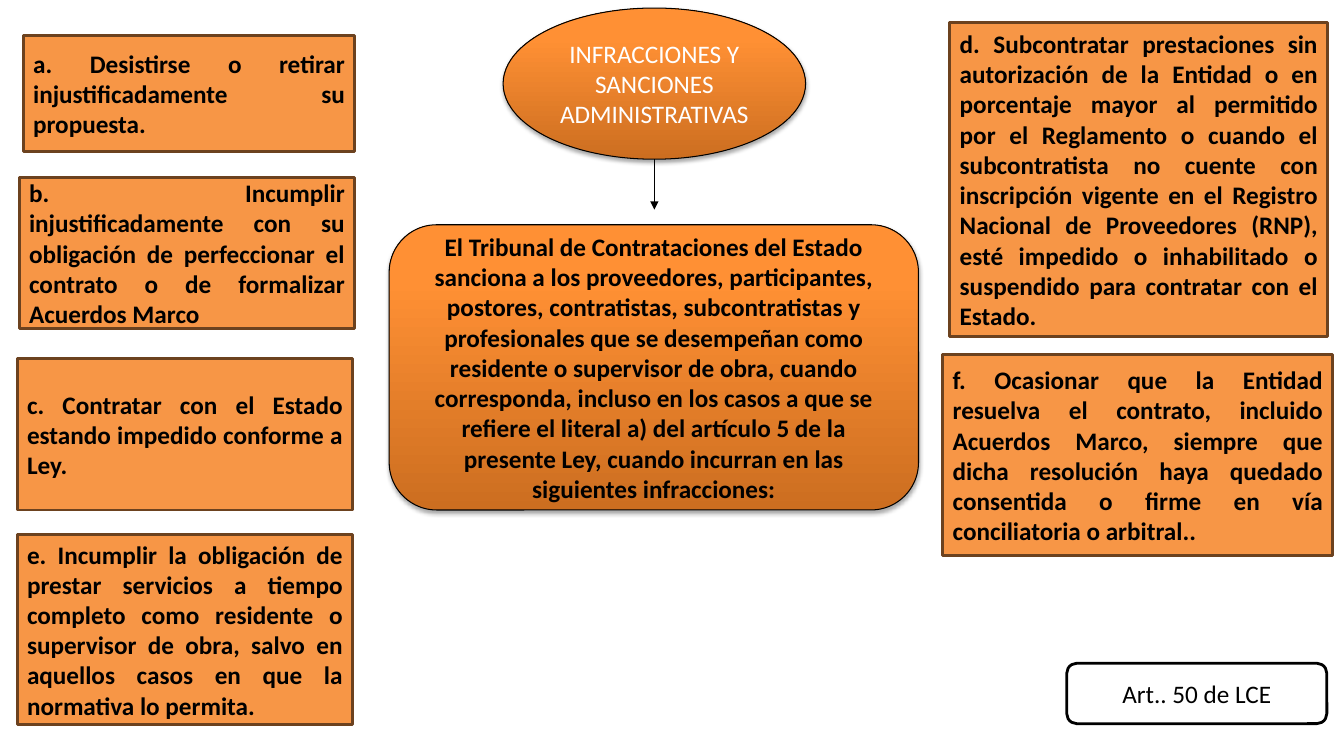
from lxml import etree
from pptx import Presentation
from pptx.dml.color import RGBColor
from pptx.enum.shapes import MSO_CONNECTOR, MSO_SHAPE
from pptx.enum.text import MSO_ANCHOR, PP_ALIGN
from pptx.oxml import parse_xml
from pptx.oxml.ns import nsdecls, qn
from pptx.util import Inches, Pt

BLACK, WHITE = "000000", "FFFFFF"
ORANGE, BROWN = "F79646", "6C421F"
GRADIENT = [(0, "CC6E20"), (80, "FF9034"), (100, "FF9136")]

TITLE = "INFRACCIONES Y SANCIONES ADMINISTRATIVAS"
RULING = (
    "El Tribunal de Contrataciones del Estado sanciona a los proveedores, participantes, "
    "postores, contratistas, subcontratistas y profesionales que se desempeñan como "
    "residente o supervisor de obra, cuando corresponda, incluso en los casos a que se "
    "refiere el literal a) del artículo 5 de la presente Ley, cuando incurran en las "
    "siguientes infracciones:"
)
INFRACTIONS = [
    ((0.23, 0.35, 3.29, 1.15), "a. Desistirse o retirar injustificadamente su propuesta."),
    ((0.19, 1.76, 3.33, 1.5),
     "b. Incumplir injustificadamente con su obligación de perfeccionar el contrato "
     "o de formalizar Acuerdos Marco"),
    ((0.17, 3.56, 3.33, 1.5), "c. Contratar con el Estado estando impedido conforme a Ley."),
    ((9.42, 0.22, 3.75, 3.12),
     "d. Subcontratar prestaciones sin autorización de la Entidad o en porcentaje mayor "
     "al permitido por el Reglamento o cuando el subcontratista no cuente con inscripción "
     "vigente en el Registro Nacional de Proveedores (RNP), esté impedido o inhabilitado "
     "o suspendido para contratar con el Estado."),
    ((0.17, 5.3, 3.33, 1.89),
     "e. Incumplir la obligación de prestar servicios a tiempo completo como residente o "
     "supervisor de obra, salvo en aquellos casos en que la normativa lo permita."),
    ((9.35, 3.52, 3.87, 1.99),
     "f. Ocasionar que la Entidad resuelva el contrato, incluido Acuerdos Marco, siempre "
     "que dicha resolución haya quedado consentida o firme en vía conciliatoria o arbitral.."),
]


def color(hex_code):
    return RGBColor.from_string(hex_code)


def write_text(shape, text, align=PP_ALIGN.CENTER, size=18, ink=BLACK, bold=False):
    frame = shape.text_frame
    frame.word_wrap = True
    frame.vertical_anchor = MSO_ANCHOR.MIDDLE
    paragraph = frame.paragraphs[0]
    paragraph.alignment = align
    run = paragraph.add_run()
    run.text = text
    run.font.name = "Calibri"
    run.font.size = Pt(size)
    run.font.bold = bold
    run.font.color.rgb = color(ink)


def add_box(slide, kind, place, fill, outline, weight):
    box = slide.shapes.add_shape(kind, *map(Inches, place))
    box.fill.solid()
    box.fill.fore_color.rgb = color(fill)
    box.line.color.rgb = color(outline)
    box.line.width = Pt(weight)
    box.shadow.inherit = False
    return box


def add_glossy_box(slide, kind, place):
    """Add a box with the orange gradient, dark at the bottom, and a soft shadow."""
    box = add_box(slide, kind, place, ORANGE, BLACK, 0.75)
    box.fill.gradient()
    box.fill.gradient_angle = 90
    properties = box.element.spPr
    stops = properties.find(qn("a:gradFill")).find(qn("a:gsLst"))
    for stop in list(stops):
        stops.remove(stop)
    for position, shade in GRADIENT:
        stop = etree.SubElement(stops, qn("a:gs"), pos=str(position * 1000))
        etree.SubElement(stop, qn("a:srgbClr"), val=shade)
    properties.find(qn("a:effectLst")).append(parse_xml(
        f'<a:outerShdw {nsdecls("a")} blurRad="{Pt(3.1)}" dist="{Pt(1.8)}" dir="5400000" '
        f'rotWithShape="0"><a:srgbClr val="{BLACK}"><a:alpha val="35000"/></a:srgbClr>'
        "</a:outerShdw>"))
    return box


def add_arrow(slide, start, end):
    arrow = slide.shapes.add_connector(
        MSO_CONNECTOR.STRAIGHT, *map(Inches, start + end))
    arrow.line.color.rgb = color(BLACK)
    arrow.line.width = Pt(0.75)
    properties = arrow.element.spPr
    etree.SubElement(properties.find(qn("a:ln")), qn("a:tailEnd"), type="triangle")
    etree.SubElement(properties, qn("a:effectLst"))


def main():
    deck = Presentation()
    deck.slide_width, deck.slide_height = Inches(13.33), Inches(7.5)
    slide = deck.slides.add_slide(deck.slide_layouts[6])

    title = add_glossy_box(slide, MSO_SHAPE.OVAL, (4.99, 0.08, 3, 1.5))
    write_text(title, TITLE, ink=WHITE)
    add_arrow(slide, (6.49, 1.58), (6.49, 2.08))
    ruling = add_glossy_box(slide, MSO_SHAPE.ROUNDED_RECTANGLE, (3.86, 2.23, 5.25, 2.83))
    write_text(ruling, RULING, bold=True)

    for place, text in INFRACTIONS:
        infraction = add_box(slide, MSO_SHAPE.RECTANGLE, place, ORANGE, BROWN, 2)
        write_text(infraction, text, align=PP_ALIGN.JUSTIFY, bold=True)

    article = add_box(
        slide, MSO_SHAPE.ROUNDED_RECTANGLE, (10.58, 6.58, 2.58, 0.6), WHITE, BLACK, 2)
    write_text(article, "Art.. 50 de LCE")
    deck.save("out.pptx")


if __name__ == "__main__":
    main()
